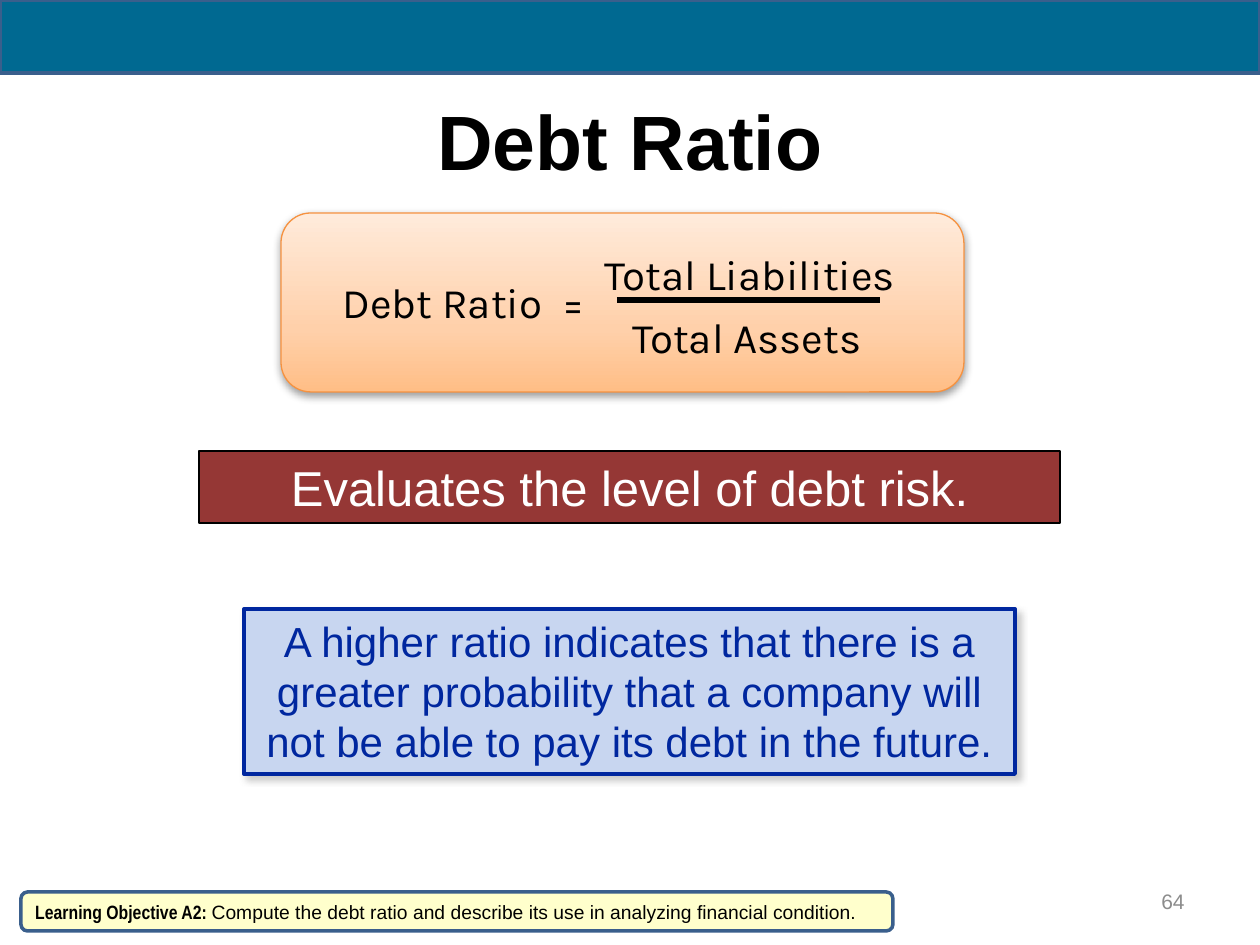
from dataclasses import dataclass
from typing import Optional

import lxml.etree
import pptx
import pptx.dml.color
import pptx.enum.shapes
import pptx.enum.text
import pptx.oxml
import pptx.util

EMU_PER_PX = 914400 / 126
NS = 'xmlns:a="http://schemas.openxmlformats.org/drawingml/2006/main"'
SHAPE = pptx.enum.shapes.MSO_SHAPE
ALIGN = pptx.enum.text.PP_ALIGN
ANCHOR = pptx.enum.text.MSO_ANCHOR


@dataclass(frozen=True)
class Box:
    x: int
    y: int
    w: int
    h: int


@dataclass(frozen=True)
class Style:
    size: float
    color: str = "000000"
    font: str = "Arial"
    bold: bool = False
    align: ALIGN = ALIGN.CENTER
    anchor: ANCHOR = ANCHOR.TOP


@dataclass(frozen=True)
class Shadow:
    color: str
    alpha: int
    blur: float
    dist: float
    angle: int


@dataclass(frozen=True)
class Label:
    text: str
    box: Box
    style: Style


@dataclass(frozen=True)
class Panel:
    box: Box
    fill: str
    line: str
    width: float
    kind: SHAPE = SHAPE.RECTANGLE
    text: str = ""
    style: Optional[Style] = None
    shadow: Optional[Shadow] = None


def px(n: int) -> int:
    return round(n * EMU_PER_PX)


def rgb(color: str) -> pptx.dml.color.RGBColor:
    return pptx.dml.color.RGBColor.from_string(color)


def place(s, box: Box) -> None:
    s.left, s.top, s.width, s.height = px(box.x), px(box.y), px(box.w), px(box.h)


def set_text(s, text: str, style: Style) -> None:
    tf = s.text_frame
    tf.word_wrap = True
    tf.vertical_anchor = style.anchor
    p = tf.paragraphs[0]
    p.text = text
    p.alignment = style.align
    p.font.size = pptx.util.Pt(style.size)
    p.font.name = style.font
    p.font.bold = style.bold
    p.font.color.rgb = rgb(style.color)


def add_label(shapes, label: Label) -> None:
    b = label.box
    s = shapes.add_textbox(px(b.x), px(b.y), px(b.w), px(b.h))
    set_text(s, label.text, label.style)


def add_shadow(s, shadow: Shadow) -> None:
    effects = s._element.spPr.find(pptx.oxml.ns.qn("a:effectLst"))
    effects.append(pptx.oxml.parse_xml(
        f'<a:outerShdw {NS} blurRad="{pptx.util.Pt(shadow.blur)}" '
        f'dist="{pptx.util.Pt(shadow.dist)}" dir="{shadow.angle * 60000}" '
        f'algn="ctr" rotWithShape="0"><a:srgbClr val="{shadow.color}">'
        f'<a:alpha val="{shadow.alpha * 1000}"/></a:srgbClr></a:outerShdw>'))


def add_panel(shapes, panel: Panel):
    b = panel.box
    s = shapes.add_shape(panel.kind, px(b.x), px(b.y), px(b.w), px(b.h))
    s.shadow.inherit = False
    s.fill.solid()
    s.fill.fore_color.rgb = rgb(panel.fill)
    s.line.color.rgb = rgb(panel.line)
    s.line.width = pptx.util.Pt(panel.width)
    if panel.style:
        set_text(s, panel.text, panel.style)
    if panel.shadow:
        add_shadow(s, panel.shadow)
    return s


def set_gradient(s, stops: list[tuple[int, str]], angle: int) -> None:
    gs = "".join(f'<a:gs pos="{pos * 1000}"><a:srgbClr val="{color}"/></a:gs>'
                 for pos, color in stops)
    solid = s._element.spPr.find(pptx.oxml.ns.qn("a:solidFill"))
    solid.getparent().replace(solid, pptx.oxml.parse_xml(
        f'<a:gradFill {NS} rotWithShape="1"><a:gsLst>{gs}</a:gsLst>'
        f'<a:lin ang="{angle * 60000}" scaled="0"/></a:gradFill>'))


def add_rule(shapes, x1: int, x2: int, y: int, width: float) -> None:
    s = shapes.add_connector(pptx.enum.shapes.MSO_CONNECTOR.STRAIGHT,
                             px(x1), px(y), px(x2), px(y))
    s.line.color.rgb = rgb("000000")
    s.line.width = pptx.util.Pt(width)
    lxml.etree.SubElement(s._element.spPr, pptx.oxml.ns.qn("a:effectLst"))


def add_formula(slide) -> None:
    shapes = slide.shapes.add_group_shape().shapes
    card = add_panel(shapes, Panel(Box(281, 213, 683, 179), "FFD0AA", "F69240", 0.75,
                                   SHAPE.ROUNDED_RECTANGLE,
                                   shadow=Shadow("000000", 38, 5, 1.6, 90)))
    set_gradient(card, [(0, "FFBE86"), (35, "FFD0AA"), (100, "FFEBDB")], 270)
    term = Style(24, font="Karla")
    add_label(shapes, Label("Total Liabilities", Box(523, 242, 454, 63), term))
    add_label(shapes, Label("Total Assets", Box(520, 305, 454, 63), term))
    add_rule(shapes, 617, 880, 300, 3)
    add_label(shapes, Label("Debt Ratio  =", Box(330, 270, 305, 63),
                            Style(24, font="Karla", align=ALIGN.LEFT)))


def add_objective(slide) -> None:
    style = Style(11, align=ALIGN.LEFT, anchor=ANCHOR.MIDDLE)
    s = add_panel(slide.shapes, Panel(Box(21, 892, 872, 39), "FFFFCC", "3A5F8C", 2,
                                      SHAPE.ROUNDED_RECTANGLE,
                                      "Learning Objective A2: ", style))
    p = s.text_frame.paragraphs[0]
    p.runs[0].font.name = "Arial Narrow"
    p.runs[0].font.bold = True
    r = p.add_run()
    r.text = "Compute the debt ratio and describe its use in analyzing financial condition."


def main() -> None:
    prs = pptx.Presentation()
    prs.slide_width, prs.slide_height = px(1260), px(945)
    slide = prs.slides.add_slide(prs.slide_layouts[5])
    title = slide.shapes.title
    place(title, Box(63, 84, 1134, 111))
    set_text(title, "Debt Ratio", Style(44, bold=True, anchor=ANCHOR.MIDDLE))
    add_label(slide.shapes, Label("64", Box(903, 876, 294, 50),
                                  Style(12, "8C8C8C", align=ALIGN.RIGHT,
                                        anchor=ANCHOR.MIDDLE)))
    panels = [
        Panel(Box(199, 451, 861, 72), "953735", "000000", 1,
              text="Evaluates the level of debt risk.", style=Style(28, "FFFFFF")),
        Panel(Box(244, 609, 771, 165), "C8D6F0", "00279F", 2.25,
              text="A higher ratio indicates that there is a greater probability that "
                   "a company will not be able to pay its debt in the future.",
              style=Style(24, "00279F"), shadow=Shadow("808080", 40, 4, 3, 45)),
        Panel(Box(0, 0, 1260, 73), "006991", "3A5F8C", 2),
    ]
    for panel in panels:
        add_panel(slide.shapes, panel)
    add_formula(slide)
    add_objective(slide)
    prs.save("out.pptx")


if __name__ == "__main__":
    main()
